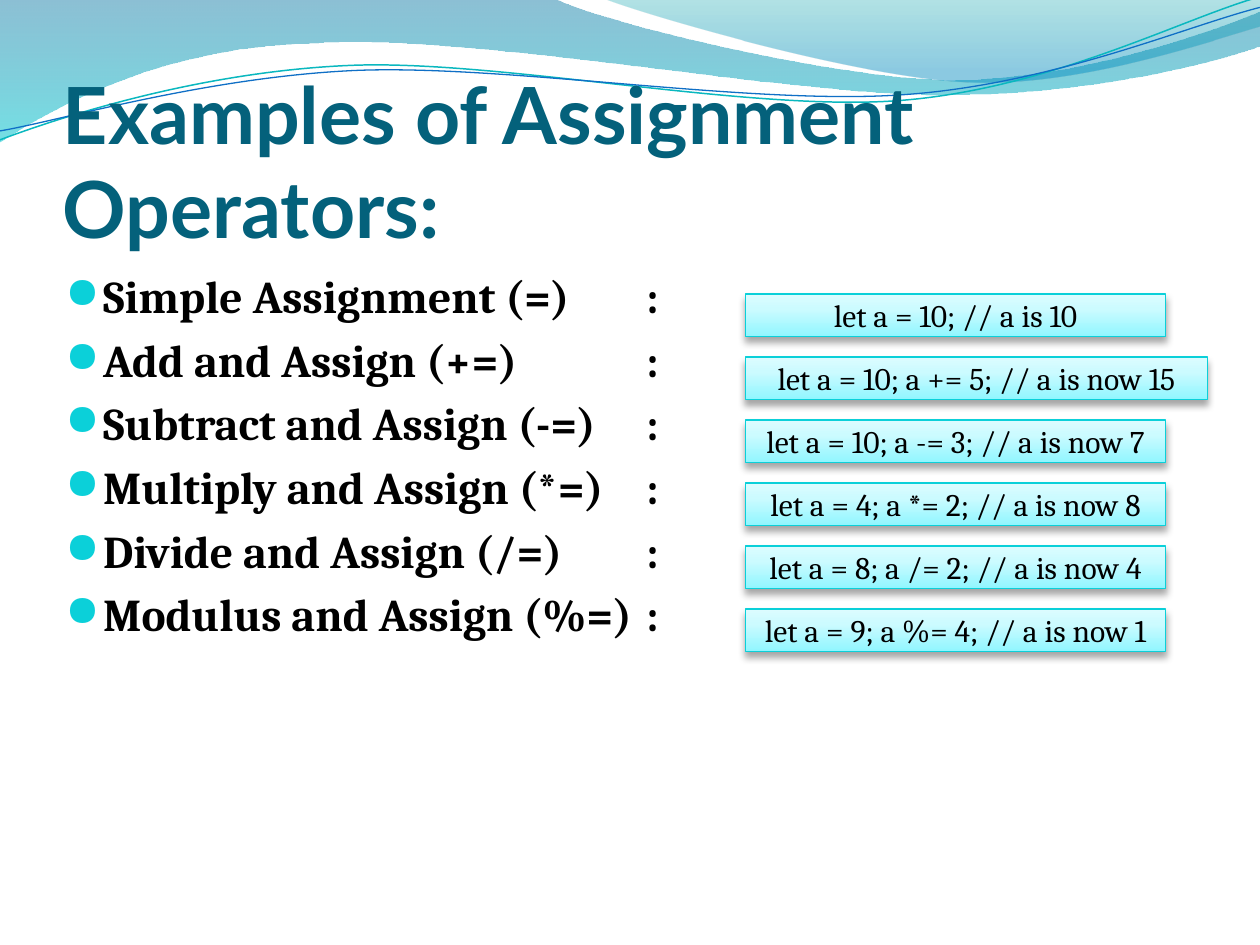
import dataclasses

import pptx
import pptx.dml.color
import pptx.enum.shapes
import pptx.enum.text
import pptx.oxml
import pptx.oxml.ns
import pptx.util
from pptx.util import Cm


@dataclasses.dataclass(frozen=True)
class Theme:
    title_color: str = "04617B"
    text_color: str = "000000"
    accent: str = "0BD0D9"
    title_font: str = "Lato"
    body_font: str = "Cambria"
    bullet_font: str = "OpenSymbol"
    title_size: float = 45
    body_size: float = 26
    code_size: float = 18
    # Gradient stops: position %, colour, opacity %
    wave_back: tuple = ((0, "0074A1", 45), (100, "00C6CF", 55))
    wave_front: tuple = ((0, "00A1A9", 30), (80, "008BBF", 45))
    box_fill: tuple = ((0, "91F6FF", 100), (65, "CCFBFF", 100), (100, "DCFCFF", 100))
    wave_lines: tuple = ("0AB8BF", "0F6FC6")


theme = Theme()
namespace = pptx.oxml.ns.nsdecls("a")


def add_text(paragraph, text, *, size, font, color, bold=False, align=None):
    run = paragraph.add_run()
    run.text = text
    run.font.size = pptx.util.Pt(size)
    run.font.name = font
    run.font.bold = bold
    run.font.color.rgb = pptx.dml.color.RGBColor.from_string(color)
    paragraph.alignment = align


def set_gradient(shape, stops, angle):
    stop_xml = "".join(
        f'<a:gs pos="{position * 1000}"><a:srgbClr val="{color}">'
        f'<a:alpha val="{opacity * 1000}"/></a:srgbClr></a:gs>'
        for position, color, opacity in stops
    )
    gradient = pptx.oxml.parse_xml(
        f'<a:gradFill {namespace} rotWithShape="1"><a:gsLst>{stop_xml}</a:gsLst>'
        f'<a:lin ang="{angle * 60000}" scaled="0"/></a:gradFill>'
    )
    shape.fill.solid()
    properties = shape._element.spPr
    properties.replace(properties.find(pptx.oxml.ns.qn("a:solidFill")), gradient)


presentation = pptx.Presentation()
presentation.slide_width = Cm(25.4)
presentation.slide_height = Cm(19.05)
slide = presentation.slides.add_slide(presentation.slide_layouts[6])

# Waves in cm: start point, then lines (2 numbers) and Bezier curves (6 numbers)
back_wave = [
    (0, 0), (11.18, -0.03),
    (12.09, 0.43, 16.87, 1.6, 19.25, 1.6), (21.67, 1.6, 24.33, 0.66, 25.4, 0.23),
    (25.43, 0.91),
    (24.97, 1.12, 22.1, 1.93, 18.95, 1.91), (15.8, 1.91, 9.7, 0.71, 6.53, 0.86),
    (3.28, 0.91, 1.17, 2.11, -0.03, 2.87), (0, 0),
]
front_wave = [
    (12.17, -0.03),
    (12.93, 0.28, 17.32, 1.57, 19.53, 1.65), (21.74, 1.75, 24.41, 0.81, 25.4, 0.53),
    (25.4, 0), (12.17, -0.03),
]
upper_line = [
    (0, 2.82), (1.22, 2.36, 4.01, 1.45, 7.04, 1.32),
    (10.03, 1.19, 15.06, 2.26, 18.11, 2.03), (21.16, 1.8, 23.83, 0.38, 25.35, -0.05),
]
lower_line = [
    (0, 2.64), (1.19, 2.44, 4.17, 1.55, 7.19, 1.42),
    (10.24, 1.3, 15.16, 2.13, 18.21, 1.91), (21.23, 1.7, 23.9, 0.53, 25.4, 0.15),
]
for outline, stops, line_color, line_width in (
    (back_wave, theme.wave_back, None, None),
    (front_wave, theme.wave_front, None, None),
    (upper_line, None, theme.wave_lines[0], 0.85),
    (lower_line, None, theme.wave_lines[1], 0.75),
):
    vertices = [(Cm(x), Cm(y)) for segment in outline
                for x, y in zip(segment[::2], segment[1::2])]
    builder = slide.shapes.build_freeform(*vertices[0])
    builder.add_line_segments(vertices[1:], close=stops is not None)
    wave = builder.convert_to_shape()

    # Join each curve's three points into one Bezier segment
    line_steps = iter(list(wave._element.iter(pptx.oxml.ns.qn("a:lnTo"))))
    for segment in outline[1:]:
        first = next(line_steps)
        if len(segment) == 6:
            curve = pptx.oxml.parse_xml(f"<a:cubicBezTo {namespace}/>")
            first.addprevious(curve)
            for step in (first, next(line_steps), next(line_steps)):
                curve.append(step[0])
                step.getparent().remove(step)

    wave.shadow.inherit = False
    if stops:
        set_gradient(wave, stops, 90)
        wave.line.fill.background()
    else:
        wave.fill.background()
        wave.line.color.rgb = pptx.dml.color.RGBColor.from_string(line_color)
        wave.line.width = pptx.util.Pt(line_width)

# Title
title = slide.shapes.add_textbox(Cm(1.27), Cm(1.95), Cm(22.86), Cm(3.18))
frame = title.text_frame
frame.word_wrap = True
frame.vertical_anchor = pptx.enum.text.MSO_ANCHOR.BOTTOM
frame.margin_left = frame.margin_right = frame.margin_bottom = 0
add_text(frame.paragraphs[0], "Examples of Assignment Operators:", size=theme.title_size,
         font=theme.title_font, color=theme.title_color, bold=True)

# Operators and their code examples
operators = [
    ("Simple Assignment (=)", "let a = 10; // a is 10"),
    ("Add and Assign (+=)", "let a = 10; a += 5; // a is now 15"),
    ("Subtract and Assign (-=)", "let a = 10; a -= 3; // a is now 7"),
    ("Multiply and Assign (*=)", "let a = 4; a *= 2; // a is now 8"),
    ("Divide and Assign (/=)", "let a = 8; a /= 2; // a is now 4"),
    ("Modulus and Assign (%=)", "let a = 9; a %= 4; // a is now 1"),
]
box_left, box_top, box_step, box_height = 15.03, 5.93, 1.27, 0.85
box_width, wide_box_width = 8.47, 9.31

# Bulleted list, with the colons on a tab stop
body = slide.shapes.add_textbox(Cm(1.07), Cm(5.28), Cm(23.29), Cm(9.73))
body.text_frame.word_wrap = True
for index, (name, code) in enumerate(operators):
    paragraph = body.text_frame.paragraphs[0] if index == 0 else body.text_frame.add_paragraph()
    add_text(paragraph, f"{name}\t:", size=theme.body_size, font=theme.body_font,
             color=theme.text_color, bold=True)
    properties = paragraph._p.get_or_add_pPr()
    properties.set("marL", str(Cm(0.76)))
    properties.set("indent", str(Cm(-0.76)))
    for format_xml in (
        f'<a:spcBef {namespace}><a:spcPct val="20000"/></a:spcBef>',
        f'<a:buClr {namespace}><a:srgbClr val="{theme.accent}"/></a:buClr>',
        f'<a:buSzPct {namespace} val="95000"/>',
        f'<a:buFont {namespace} typeface="{theme.bullet_font}"/>',
        f'<a:buChar {namespace} char="●"/>',
        f'<a:tabLst {namespace}><a:tab pos="{Cm(11.7)}" algn="l"/></a:tabLst>',
    ):
        properties.append(pptx.oxml.parse_xml(format_xml))

# Code boxes
for index, (name, code) in enumerate(operators):
    width = wide_box_width if "+=" in code else box_width
    box = slide.shapes.add_shape(
        pptx.enum.shapes.MSO_SHAPE.RECTANGLE,
        Cm(box_left), Cm(box_top + index * box_step), Cm(width), Cm(box_height))
    set_gradient(box, theme.box_fill, 270)
    box.line.color.rgb = pptx.dml.color.RGBColor.from_string(theme.accent)
    box.line.width = pptx.util.Pt(0.75)
    box.shadow.inherit = False
    effects = box._element.spPr.find(pptx.oxml.ns.qn("a:effectLst"))
    effects.append(pptx.oxml.parse_xml(
        f'<a:outerShdw {namespace} blurRad="{pptx.util.Pt(4)}" dist="{pptx.util.Pt(3)}" '
        f'dir="5400000" rotWithShape="0"><a:srgbClr val="{theme.text_color}">'
        f'<a:alpha val="35000"/></a:srgbClr></a:outerShdw>'))
    box.text_frame.word_wrap = True
    box.text_frame.vertical_anchor = pptx.enum.text.MSO_ANCHOR.MIDDLE
    add_text(box.text_frame.paragraphs[0], code, size=theme.code_size, font=theme.body_font,
             color=theme.text_color, align=pptx.enum.text.PP_ALIGN.CENTER)

presentation.save("out.pptx")
